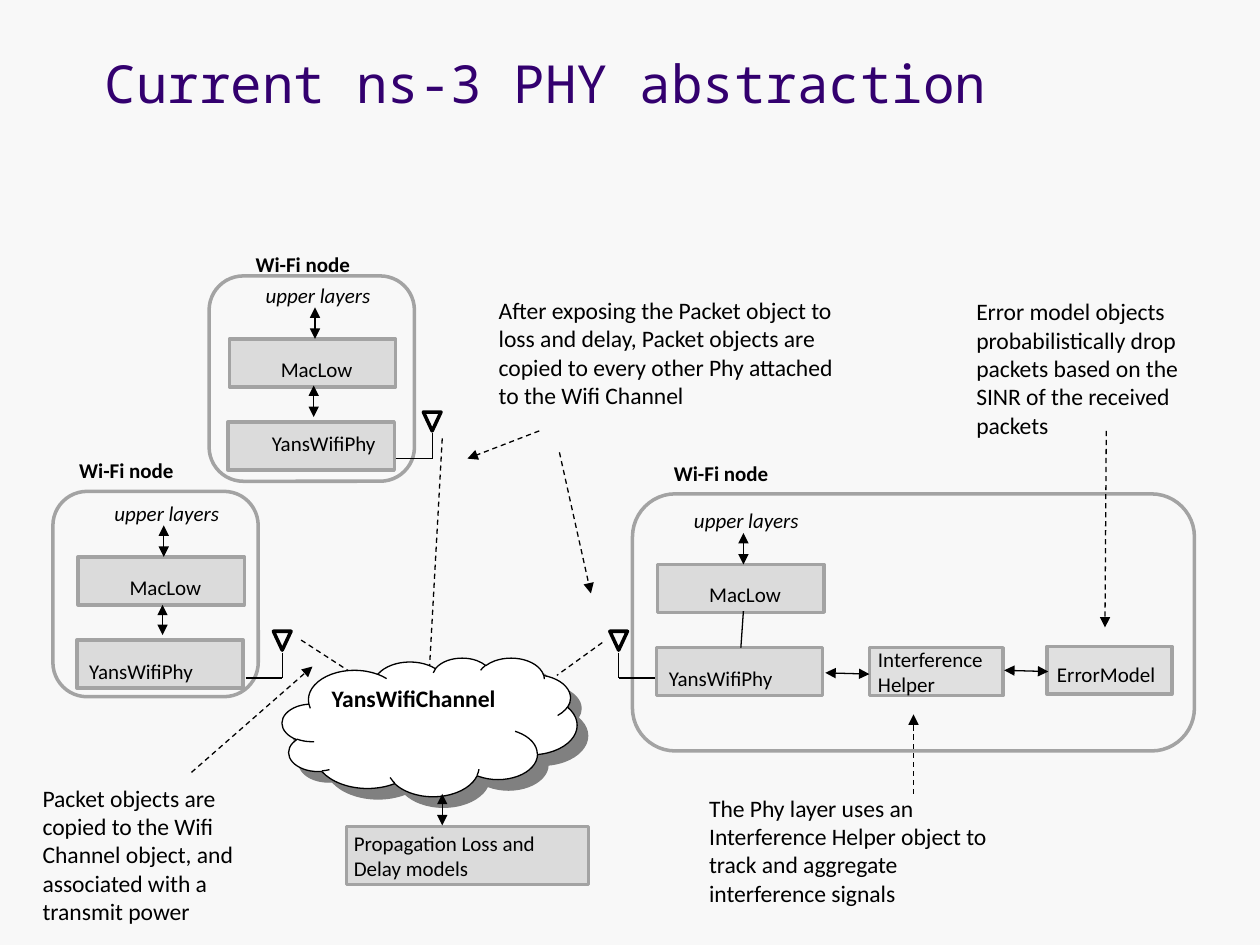
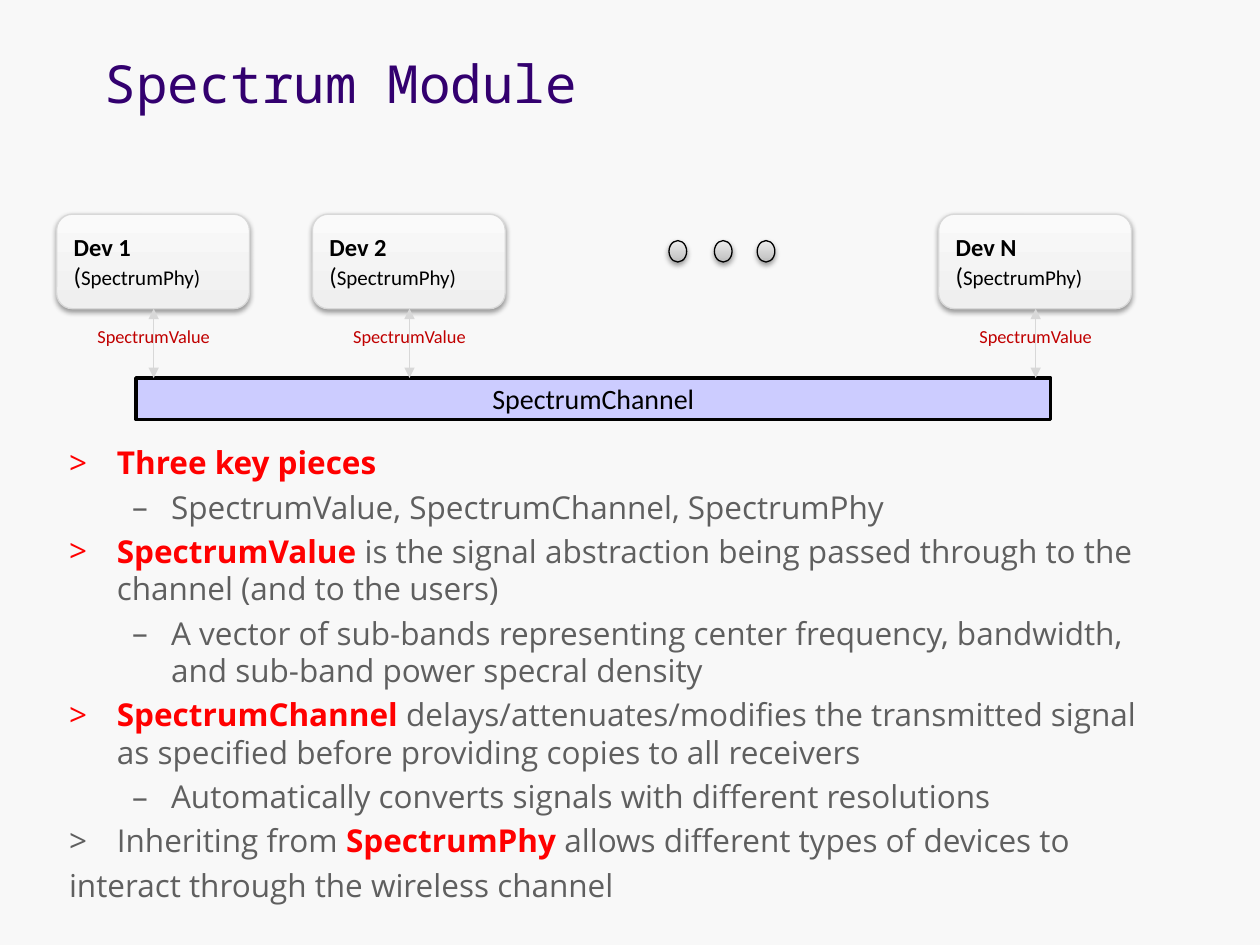
from lxml import etree
from pptx import Presentation
from pptx import util as u
from pptx.dml.color import RGBColor
from pptx.enum import dml, shapes, text
from pptx.oxml.ns import qn

COLORS = {
    "bg": "F8F8F8", "title": "33006F", "black": "000000", "white": "FFFFFF",
    "block": "DBDBDB", "helper": "E0E0E0", "border": "A3A3A3", "cloud_shadow": "808080",
    "channel": "CCCCFF", "edge": "D8D8D8", "value": "C00000", "key": "FF0000", "body": "5F5F5F",
    "dev_low": "EFEFEF", "dev_high": "FAFAFA", "dot_low": "BDBDBD", "dot_high": "EEEEEE",
}
RGB = {name: RGBColor.from_string(value) for name, value in COLORS.items()}
KIND = shapes.MSO_SHAPE
SOFT_SHADOW = ("black", 38, 3.1, 1.6, 90)


def place(slide, kind, box, label="", size=12, color="black", bold=False, italic=False,
          wrap=False, fill=None, line="border", width=2, shadow=None):
    box = [u.Inches(v) for v in box]
    if kind is None:
        sp = slide.shapes.add_textbox(*box)
        sp.text_frame.auto_size = text.MSO_AUTO_SIZE.SHAPE_TO_FIT_TEXT
    else:
        sp = slide.shapes.add_shape(kind, *box)
        sp.shadow.inherit = False
        sp.line.color.rgb = RGB[line]
        sp.line.width = u.Pt(width)
        if isinstance(fill, tuple):
            sp.fill.gradient()
            sp.fill.gradient_angle = 90
            for stop, name in zip(sp.fill.gradient_stops, fill):
                stop.color.rgb = RGB[name]
        elif fill:
            sp.fill.solid()
            sp.fill.fore_color.rgb = RGB[fill]
        else:
            sp.fill.background()
    if shadow:
        name, alpha, blur, dist, angle = shadow
        effects = sp._element.spPr.find(qn("a:effectLst"))
        outer = etree.SubElement(effects, qn("a:outerShdw"), blurRad=str(u.Pt(blur)),
                                 dist=str(u.Pt(dist)), dir=str(angle * 60000),
                                 algn="tl", rotWithShape="0")
        clr = etree.SubElement(outer, qn("a:srgbClr"), val=COLORS[name])
        etree.SubElement(clr, qn("a:alpha"), val=str(alpha * 1000))
    if label:
        tf = sp.text_frame
        tf.text = label
        tf.word_wrap = wrap
        for p in tf.paragraphs:
            p.alignment = text.PP_ALIGN.LEFT
            for r in p.runs:
                r.font.name = "Calibri"
                r.font.size = u.Pt(size)
                r.font.bold = bold
                r.font.italic = italic
                r.font.color.rgb = RGB[color]
    return sp


def link(slide, x1, y1, x2, y2, ends="", dash=False, color="black"):
    c = slide.shapes.add_connector(shapes.MSO_CONNECTOR.STRAIGHT,
                                   *[u.Inches(v) for v in (x1, y1, x2, y2)])
    c.line.color.rgb = RGB[color]
    c.line.width = u.Pt(0.75)
    if dash:
        c.line.dash_style = dml.MSO_LINE.DASH
    for end in ends.split():
        etree.SubElement(c.line._get_or_add_ln(), qn(f"a:{end}End"), type="triangle")
    etree.SubElement(c._element.spPr, qn("a:effectLst"))


BOTH = "head tail"
prs = Presentation()
prs.slide_width = u.Inches(10)
prs.slide_height = u.Inches(7.5)

slides = []
for heading in ("Current ns-3 PHY abstraction", "Spectrum Module"):
    s = prs.slides.add_slide(prs.slide_layouts[5])
    s.background.fill.solid()
    s.background.fill.fore_color.rgb = RGB["bg"]
    title = s.shapes.title
    title.left, title.top, title.width, title.height = [
        u.Inches(v) for v in (0.73, 0.41, 8.95, 1.08)]
    tf = title.text_frame
    tf.text = heading
    tf.vertical_anchor = text.MSO_ANCHOR.TOP
    p = tf.paragraphs[0]
    p.alignment = text.PP_ALIGN.LEFT
    p.line_spacing = 0.9
    r = p.runs[0]
    r.font.name = "Noto Sans Mono"
    r.font.size = u.Pt(30)
    r.font.color.rgb = RGB["title"]
    slides.append(s)
phy_slide, spectrum_slide = slides

s = phy_slide
for frame in ((5.02, 3.92, 4.46, 2.04), (0.42, 3.9, 1.63, 1.63), (1.66, 2.19, 1.63, 1.63)):
    place(s, KIND.ROUNDED_RECTANGLE, frame, fill="bg")

cloud = place(s, KIND.CLOUD, (2.24, 5.22, 2.34, 1.1), "YansWifiChannel", 13.5, bold=True,
              wrap=True, fill="white", line="black", width=0.75,
              shadow=("cloud_shadow", 100, 0, 8.5, 45))
tf = cloud.text_frame
tf.vertical_anchor = text.MSO_ANCHOR.TOP
tf.margin_left = tf.margin_right = u.Inches(0.07)
tf.margin_top = tf.margin_bottom = u.Inches(0.04)

nodes = [
    ((0.61, 5.08), (0, 0.1), (0.53, 3.58), (2.24, 5.18), 1.95),
    ((1.81, 3.35), (0.25, 0.02), (1.93, 1.95), (3.43, 3.44), 3.14),
    ((5.21, 5.14), (0, 0.09), (5.25, 3.61), (4.91, 5.18), 5.2),
]
for (x, y), (dx, dy), name_at, (mast_x, mast_y), foot_x in nodes:
    place(s, KIND.RECTANGLE, (x, y, 1.32, 0.38), fill="block")
    place(s, None, (x + dx, y + dy, 1.03, 0.3), "YansWifiPhy")
    place(s, KIND.RECTANGLE, (x + 0.01, y - 0.66, 1.32, 0.38), fill="block")
    place(s, None, (x + 0.32, y - 0.57, 0.78, 0.3), "MacLow")
    place(s, None, (x + 0.2, y - 1.16, 1.04, 0.3), "upper layers", italic=True)
    place(s, None, (*name_at, 0.96, 0.3), "Wi-Fi node", bold=True)
    link(s, x + 0.69, y - 0.91, x + 0.69, y - 0.66, BOTH)
    link(s, foot_x, mast_y + 0.2, mast_x, mast_y + 0.2)
    link(s, mast_x, mast_y, mast_x, mast_y + 0.2)
    antenna = place(s, KIND.ISOSCELES_TRIANGLE, (mast_x - 0.07, mast_y - 0.17, 0.14, 0.15),
                    line="black")
    antenna.rotation = 180

for box, fill, label_box, label in (
    ((2.75, 6.56, 1.92, 0.46), "block", (2.71, 6.54, 1.65, 0.5),
     "Propagation Loss and\nDelay models"),
    ((6.9, 5.14, 1.06, 0.38), "helper", (6.87, 5.08, 1.04, 0.5), "Interference\nHelper"),
    ((8.31, 5.13, 0.99, 0.38), "helper", (8.29, 5.2, 0.99, 0.3), "ErrorModel"),
):
    place(s, KIND.RECTANGLE, box, fill=fill)
    place(s, None, label_box, label)

for box, note in (
    ((3.86, 2.3, 3.52, 1.01), "After exposing the Packet object to\nloss and delay, Packet objects "
     "are\ncopied to every other Phy attached\nto the Wifi Channel"),
    ((7.65, 2.31, 2.03, 1.24), "Error model objects\nprobabilistically drop\n"
     "packets based on the\nSINR of the received\npackets"),
    ((0.24, 6.17, 2.03, 1.24), "Packet objects are copied to the Wifi Channel object, "
     "and associated with a transmit power"),
    ((5.53, 6.25, 2.43, 1.01), "The Phy layer uses an\nInterference Helper object to track "
     "and aggregate interference signals"),
):
    place(s, None, box, note, 13.5, wrap=True)

link(s, 5.9, 4.85, 5.88, 5.14)
for ends in ((1.29, 4.8, 1.29, 5.04), (2.49, 3.06, 2.49, 3.31), (3.51, 6.3, 3.51, 6.55),
             (6.9, 5.35, 6.55, 5.34), (8.32, 5.33, 7.97, 5.32)):
    link(s, *ends, BOTH)
for radio in ((2.39, 5.08, 2.76, 5.32), (3.51, 3.48, 3.41, 5.28), (4.78, 5.1, 4.42, 5.36)):
    link(s, *radio, dash=True)
for pointer in ((8.78, 3.42, 8.77, 4.98), (4.28, 3.42, 3.71, 3.64), (1.52, 6.13, 2.48, 5.29),
                (4.44, 3.59, 4.69, 4.71), (7.25, 6.3, 7.25, 5.67)):
    link(s, *pointer, "tail", dash=True)

s = spectrum_slide
points = [
    (">", [("Three key pieces", True)]),
    ("–", [("SpectrumValue, SpectrumChannel, SpectrumPhy", False)]),
    (">", [("SpectrumValue", True), (" is the signal abstraction being passed through to the "
                                     "channel (and to the users)", False)]),
    ("–", [("A vector of sub-bands representing center frequency, bandwidth, "
            "and sub-band power specral density", False)]),
    (">", [("SpectrumChannel", True), (" delays/attenuates/modifies the transmitted signal as "
                                       "specified before providing copies to all receivers", False)]),
    ("–", [("Automatically converts signals with different resolutions", False)]),
    (">", [("Inheriting from ", False), ("SpectrumPhy", True),
           (" allows different types of devices to", False)]),
    ("", [("interact through the wireless channel", False)]),
]
indents = {">": (0.38, -0.38), "–": (0.81, -0.31)}
body = s.shapes.add_textbox(*[u.Inches(v) for v in (0.45, 3.47, 8.96, 3.35)])
tf = body.text_frame
tf.word_wrap = True
for i, (bullet, runs) in enumerate(points):
    p = tf.paragraphs[0] if i == 0 else tf.add_paragraph()
    p.space_before = u.Pt(3.6 if i else 0)
    if bullet:
        p.level = 1 if bullet == "–" else 0
        pPr = p._p.get_or_add_pPr()
        left, hanging = indents[bullet]
        pPr.set("marL", str(u.Inches(left)))
        pPr.set("indent", str(u.Inches(hanging)))
        etree.SubElement(pPr, qn("a:buFont"), typeface="Open Sans")
        etree.SubElement(pPr, qn("a:buChar"), char=bullet)
    for words, key in runs:
        r = p.add_run()
        r.text = words
        r.font.name = "Open Sans"
        r.font.size = u.Pt(18)
        r.font.bold = key
        r.font.color.rgb = RGB["key" if key else "body"]

channel = place(s, KIND.RECTANGLE, (1.08, 3, 7.26, 0.33), "SpectrumChannel", 16,
                wrap=True, fill="channel", line="black")
channel.text_frame.paragraphs[0].alignment = text.PP_ALIGN.CENTER

for x, name in ((0.45, "Dev 1"), (2.48, "Dev 2"), (7.45, "Dev N")):
    dev = place(s, KIND.ROUNDED_RECTANGLE, (x, 1.7, 1.53, 0.75), f"{name}\n(", 14, bold=True,
                wrap=True, fill=("dev_low", "dev_high"), line="edge", width=0.75,
                shadow=SOFT_SHADOW)
    p = dev.text_frame.paragraphs[1]
    p.runs[0].font.bold = False
    r = p.add_run()
    r.text = "SpectrumPhy)"
    r.font.name = "Calibri"
    r.font.size = u.Pt(12)
    r.font.color.rgb = RGB["black"]
    link(s, x + 0.77, 2.45, x + 0.77, 3, BOTH, color="edge")
    value = place(s, None, (x + 0.1, 2.53, 1.34, 0.39), "SpectrumValue", 10.5, "value")
    value.text_frame.paragraphs[0].alignment = text.PP_ALIGN.CENTER

for x in (5.31, 5.67, 6.01):
    place(s, KIND.OVAL, (x, 1.91, 0.14, 0.17), fill=("dot_low", "dot_high"),
          line="black", width=0.75, shadow=SOFT_SHADOW)

prs.save("out.pptx")
